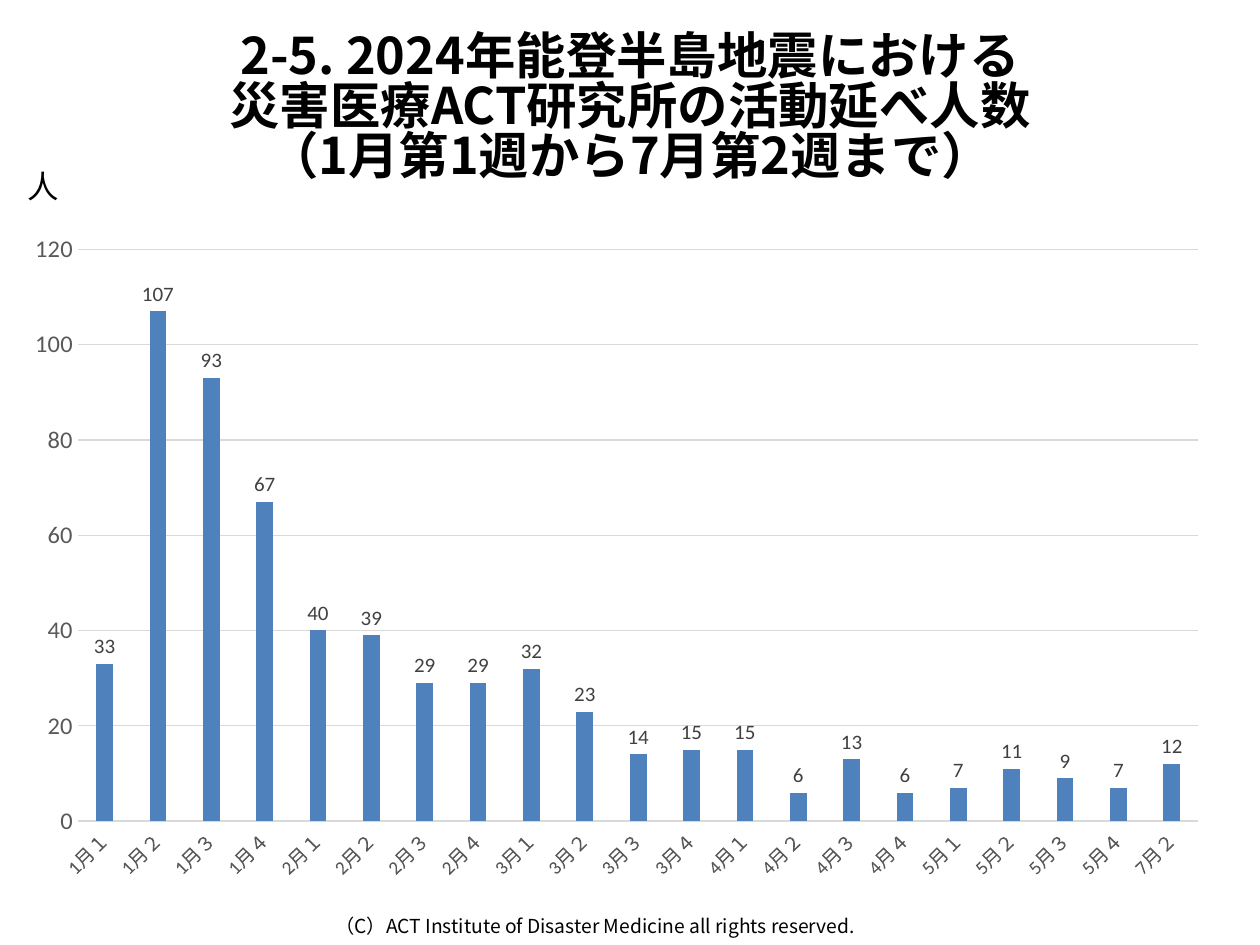
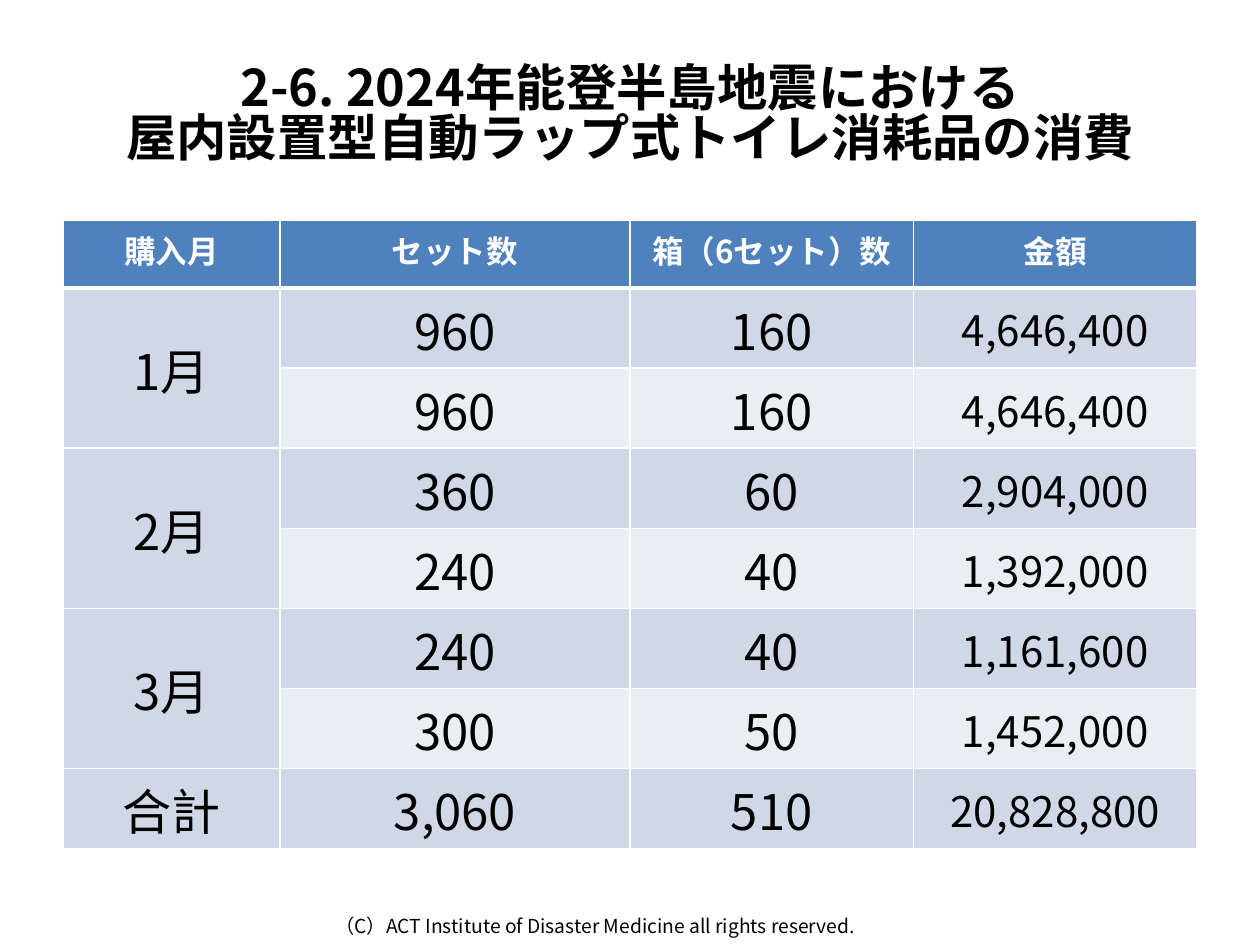
from copy import deepcopy

from lxml.etree import SubElement
from pptx import Presentation
from pptx.chart.data import CategoryChartData
from pptx.dml.color import RGBColor
from pptx.enum.chart import XL_CHART_TYPE as ChartType
from pptx.enum.chart import XL_LABEL_POSITION as LabelPosition
from pptx.enum.chart import XL_TICK_MARK as TickMark
from pptx.enum.text import MSO_ANCHOR as Anchor
from pptx.enum.text import MSO_AUTO_SIZE as AutoSize
from pptx.enum.text import PP_ALIGN as Align
from pptx.oxml import parse_xml
from pptx.oxml.ns import nsdecls, qn
from pptx.util import Pt

COLORS = {
    "text": "000000",
    "white": "FFFFFF",
    "accent": "4F81BD",
    "band_dark": "D0D8E8",
    "band_light": "E9EDF4",
    "axis_text": "595959",
    "label_text": "404040",
    "grid": "D9D9D9",
}
SANS, LATIN = "Noto Sans CJK JP", "Calibri"
TITLE_FORMAT = {"size": Pt(28.8), "bold": True, "name": SANS}
FOOTER_FORMAT = {"size": Pt(11), "name": SANS}
UNIT_FORMAT = {"size": Pt(18), "name": LATIN}
HEADER_FORMAT = {"size": Pt(18), "bold": True, "name": SANS}
CELL_FORMAT = {"size": Pt(28), "bold": False, "name": SANS}
AMOUNT_FORMAT = {**CELL_FORMAT, "size": Pt(24)}
FOOTER = "（C）ACT Institute of Disaster Medicine all rights reserved."

WEEKS_BY_MONTH = {1: "１２３４", 2: "１２３４", 3: "１２３４",
                  4: "１２３４", 5: "１２３４", 7: "２"}
PEOPLE = [33, 107, 93, 67, 40, 39, 29, 29, 32, 23, 14,
          15, 15, 6, 13, 6, 7, 11, 9, 7, 12]

PURCHASES = [
    ("購入月", "セット数", "箱（6セット）数", "金額"),
    ("1月", "960", "160", "4,646,400"),
    ("", "960", "160", "4,646,400"),
    ("2月", "360", "60", "2,904,000"),
    ("", "240", "40", "1,392,000"),
    ("3月", "240", "40", "1,161,600"),
    ("", "300", "50", "1,452,000"),
    ("合計", "3,060", "510", "20,828,800"),
]
COLUMN_WIDTHS = [124, 200, 162, 162]
HEADER_HEIGHT, ROW_HEIGHT = 38.6, 45.8


def rgb(name):
    return RGBColor.from_string(COLORS[name])


def points(*lengths):
    return [Pt(length) for length in lengths]


def set_font(font, values, color):
    for key, value in values.items():
        setattr(font, key, value)
    font.color.rgb = rgb(color)


def write(para, text, values, color="text", align=Align.LEFT):
    """Fill a paragraph, giving its runs and line breaks the same format."""
    para.text = text
    para.alignment = align
    for span in para.runs:
        set_font(span.font, values, color)
        if values["name"] == SANS:
            properties = span._r.get_or_add_rPr()
            SubElement(properties, qn("a:ea"), typeface=SANS)
    for line_break in para._p.findall(qn("a:br")):
        line_break.append(deepcopy(para.runs[0]._r.rPr))


def add_page(deck, title, top, height):
    page = deck.slides.add_slide(deck.slide_layouts[5])
    box = page.shapes.title
    box.left, box.top, box.width, box.height = points(36, top, 648, height)
    frame = box.text_frame
    frame.auto_size = AutoSize.NONE
    frame.vertical_anchor = Anchor.MIDDLE
    write(frame.paragraphs[0], title, TITLE_FORMAT, align=Align.CENTER)
    frame.paragraphs[0].line_spacing = 0.83
    add_text(page, FOOTER, (184.5, 519, 360, 21), FOOTER_FORMAT)
    return page


def add_text(page, text, place, values, wrap=True):
    frame = page.shapes.add_textbox(*points(*place)).text_frame
    frame.word_wrap = wrap
    write(frame.paragraphs[0], text, values)


def set_line(line, color):
    line.color.rgb = rgb(color)
    line.width = Pt(0.75)


def set_plot_area(chart, **fractions):
    """Fix the inner plot area as fractions of the chart."""
    parts = "".join(f'<c:{key} val="{value}"/>' for key, value in fractions.items())
    layout = parse_xml(
        f'<c:layout {nsdecls("c")}><c:manualLayout><c:layoutTarget val="inner"/>'
        f'<c:xMode val="edge"/><c:yMode val="edge"/>{parts}</c:manualLayout></c:layout>')
    area = chart._chartSpace.chart.plotArea
    for old in area.findall(qn("c:layout")):
        area.remove(old)
    area.insert(0, layout)


def add_people_chart(page):
    data = CategoryChartData()
    data.categories = [f"{month}月{week}Ｗ"
                       for month, weeks in WEEKS_BY_MONTH.items() for week in weeks]
    data.add_series("Series 1", PEOPLE)
    chart = page.shapes.add_chart(
        ChartType.COLUMN_CLUSTERED, *points(20, 134, 680.5, 368.5), data).chart
    chart.has_legend = chart.has_title = False
    set_font(chart.font, {"size": Pt(10), "name": LATIN}, "text")
    set_plot_area(chart, x=0.035, y=0.015, w=0.942, h=0.906)

    for axis, size in ((chart.category_axis, 11), (chart.value_axis, 14)):
        axis.major_tick_mark = axis.minor_tick_mark = TickMark.NONE
        set_font(axis.tick_labels.font, {"size": Pt(size), "name": LATIN}, "axis_text")
    set_line(chart.category_axis.format.line, "grid")
    values = chart.value_axis
    values.minimum_scale, values.maximum_scale, values.major_unit = 0, 120, 20
    values.format.line.fill.background()
    set_line(values.major_gridlines.format.line, "grid")

    plot = chart.plots[0]
    plot.gap_width, plot.overlap = 219, -27
    plot.vary_by_categories = False
    fill = plot.series[0].format.fill
    fill.solid()
    fill.fore_color.rgb = rgb("accent")
    plot.has_data_labels = True
    labels = plot.data_labels
    labels.show_value = True
    labels.position = LabelPosition.OUTSIDE_END
    set_font(labels.font, {"size": Pt(12), "name": LATIN}, "label_text")


def set_borders(cell, top, bottom):
    properties = cell._tc.get_or_add_tcPr()
    for side, width in (("L", 1), ("R", 1), ("T", top), ("B", bottom)):
        line = SubElement(properties, qn(f"a:ln{side}"), w=str(Pt(width)))
        fill = SubElement(line, qn("a:solidFill"))
        SubElement(fill, qn("a:srgbClr"), val=COLORS["white"])


def format_cell(cell, text, row, column):
    set_borders(cell, top=3 if row == 1 else 1, bottom=3 if row == 0 else 1)
    cell.fill.solid()
    if row == 0:
        background, color, values = "accent", "white", HEADER_FORMAT
    else:
        background = "band_dark" if row % 2 else "band_light"
        color = "text"
        values = AMOUNT_FORMAT if column == 3 else CELL_FORMAT
        cell.vertical_anchor = Anchor.MIDDLE
        cell.margin_left = cell.margin_right = cell.margin_top = Pt(0.75)
        cell.margin_bottom = 0
    cell.fill.fore_color.rgb = rgb(background)
    if text:
        write(cell.text_frame.paragraphs[0], text, values, color, Align.CENTER)


def add_purchase_table(page):
    heights = [HEADER_HEIGHT] + [ROW_HEIGHT] * (len(PURCHASES) - 1)
    table = page.shapes.add_table(
        len(PURCHASES), len(COLUMN_WIDTHS),
        *points(36, 126, sum(COLUMN_WIDTHS), sum(heights))).table
    for column, width in zip(table.columns, COLUMN_WIDTHS):
        column.width = Pt(width)
    for row, height in zip(table.rows, heights):
        row.height = Pt(height)
    for row, texts in enumerate(PURCHASES):
        for column, text in enumerate(texts):
            format_cell(table.cell(row, column), text, row, column)
        if not texts[0]:
            table.cell(row - 1, 0).merge(table.cell(row, 0))


def main():
    deck = Presentation()
    deck.slide_width, deck.slide_height = points(720, 540)

    people_page = add_page(
        deck,
        "2-5. 2024年能登半島地震における\n災害医療ACT研究所の活動延べ人数\n"
        "（1月第1週から7月第2週まで）", 9.4, 106.5)
    add_people_chart(people_page)
    add_text(people_page, "人", (8.6, 92, 32.4, 29), UNIT_FORMAT, wrap=False)

    purchase_page = add_page(
        deck,
        "2-6. 2024年能登半島地震における\n屋内設置型自動ラップ式トイレ消耗品の消費",
        21.6, 90)
    add_purchase_table(purchase_page)

    deck.save("out.pptx")


if __name__ == "__main__":
    main()
